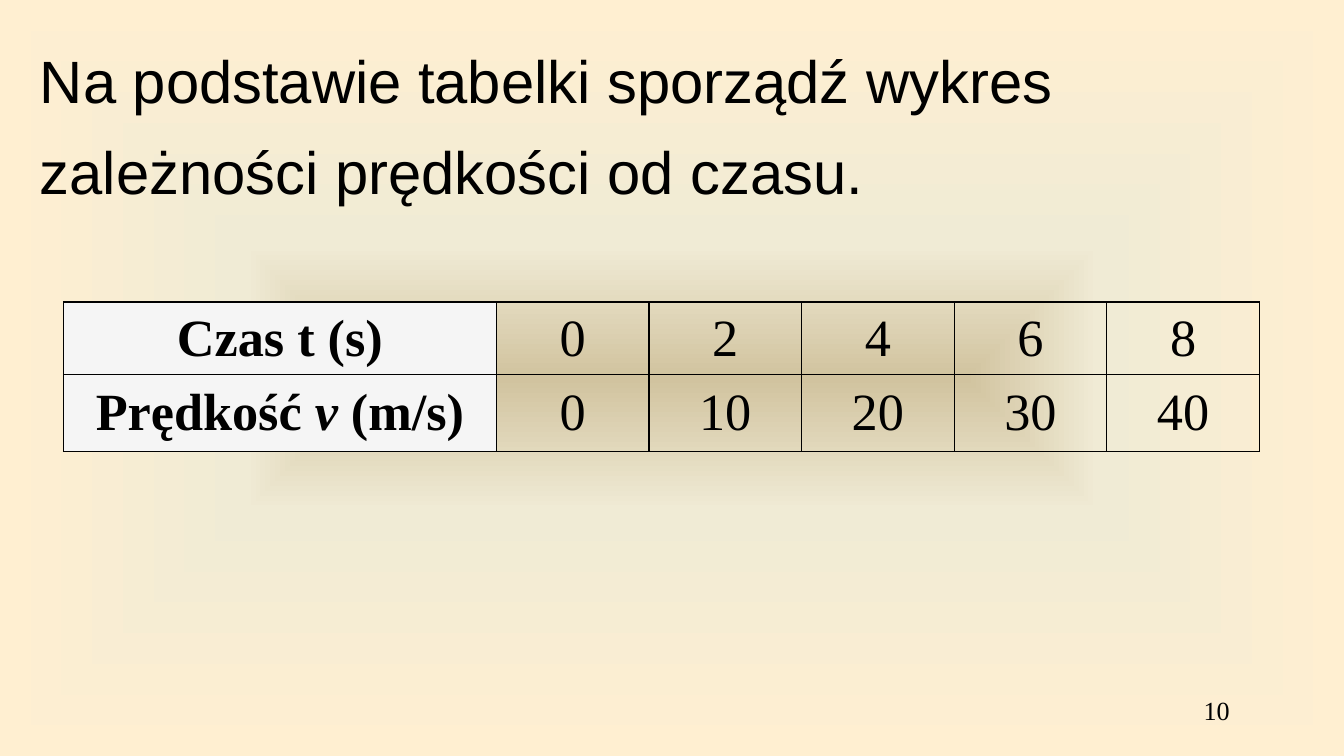
from pptx import Presentation
from pptx.dml.color import RGBColor
from pptx.enum.text import MSO_ANCHOR, MSO_AUTO_SIZE, PP_ALIGN
from pptx.oxml import parse_xml
from pptx.oxml.ns import nsdecls, qn
from pptx.util import Cm, Pt

MIDDLE = MSO_ANCHOR.MIDDLE
NO_AUTOFIT = MSO_AUTO_SIZE.NONE
LEFT, CENTER, RIGHT = PP_ALIGN.LEFT, PP_ALIGN.CENTER, PP_ALIGN.RIGHT
TITLE_ONLY = 5

BLACK = RGBColor(0x00, 0x00, 0x00)
HEADER_GREY = RGBColor(0xF5, 0xF5, 0xF5)
SAND = RGBColor(0xD1, 0xC3, 0x9F)
IVORY = RGBColor(0xF0, 0xEB, 0xD5)
CREAM = RGBColor(0xFF, 0xEF, 0xD1)
BACKGROUND_STOPS = ((0, SAND), (35, IVORY), (100, CREAM))

SANS = "Arial"
SERIF = "Times New Roman"

TASK = "Na podstawie tabelki sporządź wykres zależności prędkości od czasu."
MEASUREMENTS = (
    ((("Czas t (s)", False),), (0, 2, 4, 6, 8)),
    ((("Prędkość ", False), ("v ", True), ("(m/s)", False)), (0, 10, 20, 30, 40)),
)
ROW_HEIGHTS = (Cm(1.37), Cm(1.45))
LABEL_WIDTH = Cm(8.18)


def style_paragraph(para, font_name, size, align, bold=False):
    """Set the font and alignment of a whole paragraph."""
    para.alignment = align
    para.font.name = font_name
    para.font.size = Pt(size)
    para.font.bold = bold
    para.font.color.rgb = BLACK


def paint_background(page):
    """Fill the page with a gradient that spreads from its centre."""
    page.background.fill.gradient()
    default = page.element.find(".//" + qn("a:gradFill"))
    stops = "".join(
        f'<a:gs pos="{percent * 1000}"><a:srgbClr val="{color}"/></a:gs>'
        for percent, color in BACKGROUND_STOPS
    )
    gradient = parse_xml(
        f'<a:gradFill {nsdecls("a")} rotWithShape="1"><a:gsLst>{stops}</a:gsLst>'
        '<a:path path="shape"><a:fillToRect l="50000" t="50000" r="50000" b="50000"/>'
        "</a:path></a:gradFill>"
    )
    default.getparent().replace(default, gradient)


def add_task(page, left, top, width, height):
    """Place the task in the title placeholder."""
    title = page.shapes.title
    title.left, title.top, title.width, title.height = left, top, width, height
    frame = title.text_frame
    frame.word_wrap = True
    frame.auto_size = NO_AUTOFIT
    frame.vertical_anchor = MIDDLE
    para = frame.paragraphs[0]
    style_paragraph(para, SANS, 32, LEFT)
    para.line_spacing = 1.05
    para.add_run().text = TASK
    space = para.add_run()
    space.text = " "
    space.font.size = Pt(40)


def add_borders(cell):
    """Draw a thin black line on each side of a cell."""
    properties = cell._tc.get_or_add_tcPr()
    for index, side in enumerate("LRTB"):
        line = parse_xml(
            f'<a:ln{side} {nsdecls("a")} w="{Pt(0.75)}"><a:solidFill>'
            f'<a:srgbClr val="{BLACK}"/></a:solidFill></a:ln{side}>'
        )
        properties.insert(index, line)


def fill_cell(cell, spans, is_label):
    """Write text spans into a cell and format it."""
    cell.vertical_anchor = MIDDLE
    cell.margin_left = cell.margin_right = Cm(0.25)
    cell.margin_top = cell.margin_bottom = Cm(0.1)
    if is_label:
        cell.fill.solid()
        cell.fill.fore_color.rgb = HEADER_GREY
    else:
        cell.fill.background()
    add_borders(cell)
    para = cell.text_frame.paragraphs[0]
    style_paragraph(para, SERIF, 28, CENTER, is_label)
    for text, italic in spans:
        span = para.add_run()
        span.text = text
        span.font.italic = italic


def add_measurements(page, left, top, width, height):
    """Add the table of speed against time."""
    value_count = len(MEASUREMENTS[0][1])
    table = page.shapes.add_table(
        len(MEASUREMENTS), value_count + 1, left, top, width, height
    ).table
    table.first_row = table.horz_banding = False
    table.columns[0].width = LABEL_WIDTH
    for column in range(1, value_count + 1):
        table.columns[column].width = (width - LABEL_WIDTH) // value_count
    for row, (label, values) in enumerate(MEASUREMENTS):
        table.rows[row].height = ROW_HEIGHTS[row]
        fill_cell(table.cell(row, 0), label, True)
        for column, value in enumerate(values, start=1):
            fill_cell(table.cell(row, column), ((str(value), False),), False)


def add_page_number(page, left, top, width, height):
    """Add the page number, aligned right."""
    box = page.shapes.add_textbox(left, top, width, height)
    box.text_frame.word_wrap = True
    para = box.text_frame.paragraphs[0]
    para.text = "10"
    style_paragraph(para, SERIF, 14, RIGHT)


def main():
    """Build the deck and save it."""
    deck = Presentation()
    deck.slide_width, deck.slide_height = Cm(25.4), Cm(14.29)
    page = deck.slides.add_slide(deck.slide_layouts[TITLE_ONLY])
    paint_background(page)
    add_task(page, Cm(0.5), Cm(0.7), Cm(24), Cm(3.33))
    add_measurements(page, Cm(1.2), Cm(5.71), Cm(22.6), sum(ROW_HEIGHTS))
    add_page_number(page, Cm(18.21), Cm(13), Cm(5.28), Cm(0.97))
    deck.save("out.pptx")


if __name__ == "__main__":
    main()
